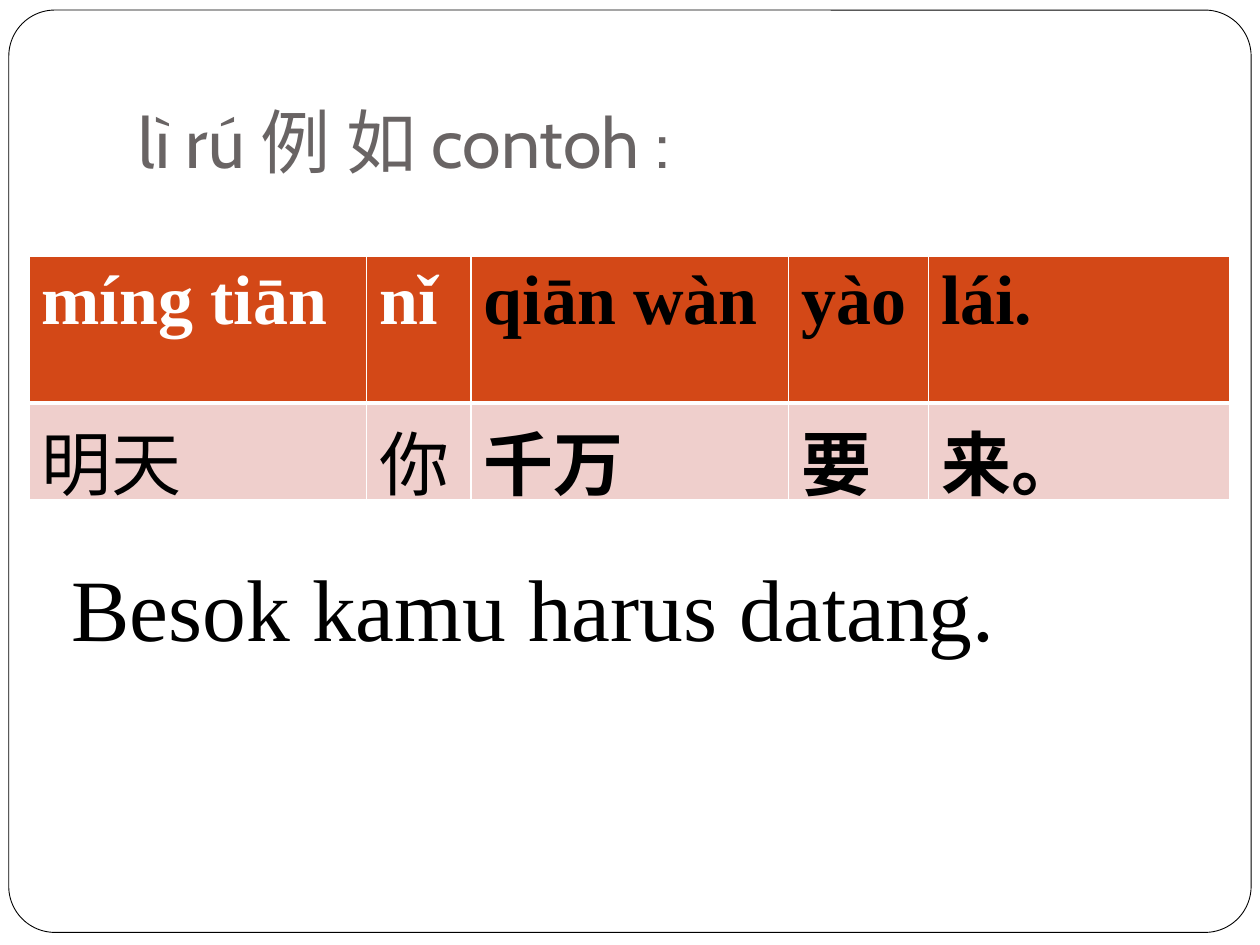
import pptx
import pptx.util
import pptx.dml.color
import pptx.enum.shapes
import pptx.enum.text
import pptx.oxml.ns
import lxml.etree

Inches, Pt = pptx.util.Inches, pptx.util.Pt

# Content
TITLE = "lì rú 例 如 contoh :"
WORDS = [
    ("míng tiān", "明天"),
    ("nǐ", "你"),
    ("qiān wàn", "千万"),
    ("yào", "要"),
    ("lái.", "来。"),
]
TRANSLATION = "Besok kamu harus datang."

COLORS = {"white": "FFFFFF", "black": "000000", "title": "696464",
          "header": "D34817", "band": "EFCFCC"}
COL_WIDTHS = [2.68, 0.83, 2.52, 1.11, 2.39]
ROW_HEIGHTS = [1.17, 0.63]
PLAIN_COLUMNS = 2  # the leading words stand outside the highlighted pattern


def rgb(name):
    return pptx.dml.color.RGBColor.from_string(COLORS[name])


def write(p, text, color, **formats):
    r = p.add_run()
    r.text = text
    r.font.color.rgb = rgb(color)
    for name, value in formats.items():
        setattr(r.font, name, value)


def place(sp, x, y, w, h):
    box = {"left": x, "top": y, "width": w, "height": h}
    for name, value in box.items():
        setattr(sp, name, Inches(value))


def add_borders(cell, widths):
    tcPr = cell._tc.get_or_add_tcPr()
    for side, width in widths.items():
        ln = lxml.etree.SubElement(tcPr, pptx.oxml.ns.qn(f"a:ln{side}"), w=str(Pt(width)))
        fill = lxml.etree.SubElement(ln, pptx.oxml.ns.qn("a:solidFill"))
        lxml.etree.SubElement(fill, pptx.oxml.ns.qn("a:srgbClr"), val=COLORS["white"])


prs = pptx.Presentation()
prs.slide_width, prs.slide_height = Inches(10), Inches(7.5)
s = prs.slides.add_slide(prs.slide_layouts[5])

# Rounded frame, behind everything else
frame = s.shapes.add_shape(pptx.enum.shapes.MSO_SHAPE.ROUNDED_RECTANGLE, 0, 0, 0, 0)
place(frame, 0.07, 0.08, 9.86, 7.32)
frame.adjustments[0] = 0.05
frame.shadow.inherit = False
frame.fill.solid()
frame.fill.fore_color.rgb = rgb("white")
frame.line.color.rgb = rgb("black")
frame.line.width = Pt(0.5)
s.shapes._spTree.insert(2, frame._element)

# Title
title = s.shapes.title
place(title, 1, 0.3, 8.5, 1.25)
tf = title.text_frame
tf.vertical_anchor = pptx.enum.text.MSO_ANCHOR.BOTTOM
tf.margin_bottom = Inches(0.1)
p = tf.paragraphs[0]
p.alignment = pptx.enum.text.PP_ALIGN.LEFT
write(p, TITLE, "title", size=Pt(40), name="Cabin")

# Translation
box = s.shapes.add_textbox(0, 0, 0, 0)
place(box, 0.47, 4.35, 8.98, 1.27)
box.text_frame.word_wrap = True
p = box.text_frame.paragraphs[0]
p.space_before = Pt(5.8)
write(p, TRANSLATION, "black", size=Pt(50), name="Times New Roman")

# Word table: pinyin above characters
table = s.shapes.add_table(2, len(WORDS), Inches(0.23), Inches(2.03),
                           Inches(sum(COL_WIDTHS)), Inches(sum(ROW_HEIGHTS))).table
for row, height in zip(table.rows, ROW_HEIGHTS):
    row.height = Inches(height)
for c, (width, word) in enumerate(zip(COL_WIDTHS, WORDS)):
    table.columns[c].width = Inches(width)
    for r, text in enumerate(word):
        header, plain = r == 0, c < PLAIN_COLUMNS
        cell = table.cell(r, c)
        add_borders(cell, {"L": 1, "R": 1, "T": 1 if header else 3, "B": 3 if header else 1})
        cell.fill.solid()
        cell.fill.fore_color.rgb = rgb("header" if header else "band")
        write(cell.text_frame.paragraphs[0], text,
              "white" if header and plain else "black",
              size=Pt(40), name="Times New Roman", bold=header or not plain)

prs.save("out.pptx")
